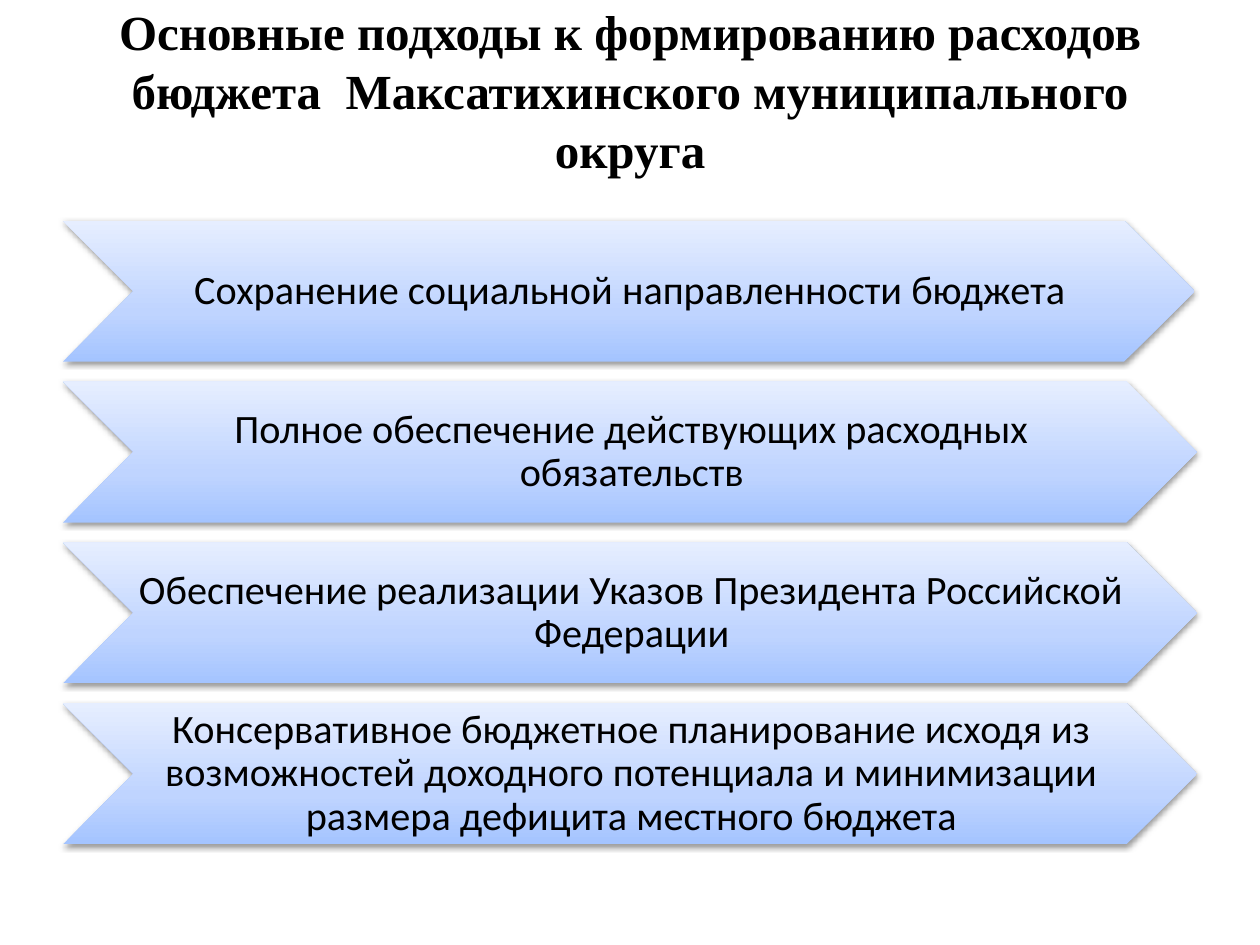
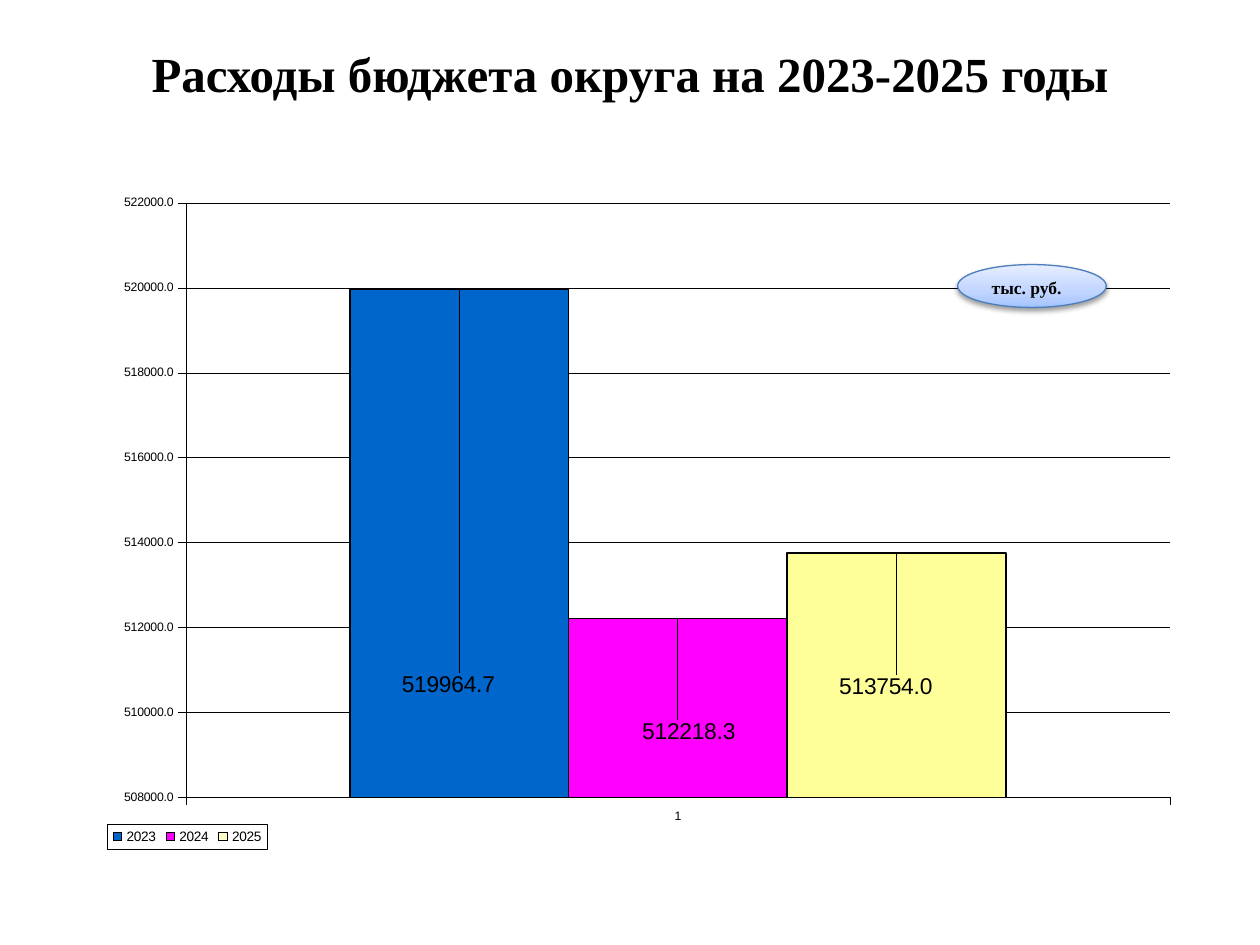
import pptx
import pptx.util
import pptx.chart.data
import pptx.dml.color
import pptx.enum.chart
import pptx.enum.shapes
import pptx.enum.text
import pptx.oxml
import pptx.oxml.ns

Inches = pptx.util.Inches
Pt = pptx.util.Pt
RGBColor = pptx.dml.color.RGBColor
Shapes = pptx.enum.shapes.MSO_SHAPE
Align = pptx.enum.text.PP_ALIGN
Anchor = pptx.enum.text.MSO_ANCHOR
namespace = pptx.oxml.ns.nsdecls
qualified = pptx.oxml.ns.qn

# Content
APPROACHES_TITLE = ("Основные подходы к формированию расходов\n"
                    "бюджета  Максатихинского муниципального округа")
APPROACHES = [
    "Сохранение социальной направленности бюджета",
    "Полное обеспечение действующих расходных обязательств",
    "Обеспечение реализации Указов Президента Российской Федерации",
    "Консервативное бюджетное планирование исходя из возможностей "
    "доходного потенциала и минимизации размера дефицита местного бюджета",
]
EXPENSES_TITLE = "Расходы бюджета округа на 2023-2025 годы"
UNIT = "тыс. руб."

# Shared style
BLACK = RGBColor(0x00, 0x00, 0x00)
WHITE = RGBColor(0xFF, 0xFF, 0xFF)
BLUE = RGBColor(0x00, 0x66, 0xCC)
MAGENTA = RGBColor(0xFF, 0x00, 0xFF)
CREAM = RGBColor(0xFF, 0xFF, 0xCC)
YELLOW = RGBColor(0xFF, 0xFF, 0x99)
MINT = RGBColor(0xCC, 0xFF, 0xCC)
OUTLINE = RGBColor(0x4B, 0x7E, 0xBC)
GRADIENT = [(0, RGBColor(0xA4, 0xC4, 0xFF)),
            (35, RGBColor(0xBF, 0xD4, 0xFF)),
            (100, RGBColor(0xE6, 0xEE, 0xFF))]
SERIF, SANS, CHART_FONT = "Times New Roman", "Calibri", "Arial"
MARGIN, CONTENT_WIDTH = 0.5, 9

# Year, value, legend colour, bar colour, label background, label shift (x, y)
EXPENSES = [
    ("2023", 519964.7, BLUE, BLUE, WHITE, (-0.01, 0.6)),
    ("2024", 512218.3, MAGENTA, MAGENTA, WHITE, (0.01, 0.19)),
    ("2025", 513754.0, CREAM, YELLOW, MINT, (-0.01, 0.22)),
]


def write_text(shape, text, size, font=SERIF, bold=False, align=Align.CENTER,
               anchor=Anchor.MIDDLE, spacing=None, insets=(0.1, 0.05, 0.1, 0.05)):
    frame = shape.text_frame
    frame.word_wrap = True
    frame.vertical_anchor = anchor
    (frame.margin_left, frame.margin_top,
     frame.margin_right, frame.margin_bottom) = map(Inches, insets)
    paragraph = frame.paragraphs[0]
    paragraph.alignment = align
    if spacing:
        paragraph.line_spacing = spacing
    for number, line in enumerate(text.split("\n")):
        if number:
            paragraph.add_line_break()
        run = paragraph.add_run()
        run.text = line
        style_font(run.font, size, font, bold)


def style_font(font, size, name=CHART_FONT, bold=False):
    font.size, font.name, font.bold = Pt(size), name, bold
    font.color.rgb = BLACK


def add_text(slide, box, text, size, **options):
    write_text(slide.shapes.add_textbox(*map(Inches, box)), text, size, **options)


def add_title(slide, text, height, **options):
    add_text(slide, (MARGIN, 0.3, CONTENT_WIDTH, height), text, 28, bold=True, **options)


def add_glossy_shape(slide, kind, box):
    """Add a shape with the shared blue gradient and soft shadow."""
    shape = slide.shapes.add_shape(kind, *map(Inches, box))
    shape.line.fill.background()
    shape.fill.gradient()
    shape.fill.gradient_angle = 90
    properties = shape._element.spPr
    stops = properties.find(".//" + qualified("a:gsLst"))
    for stop in list(stops):
        stops.remove(stop)
    for position, color in GRADIENT:
        stops.append(pptx.oxml.parse_xml(
            f'<a:gs {namespace("a")} pos="{position * 1000}">'
            f'<a:srgbClr val="{color}"/></a:gs>'))
    shape.shadow.inherit = False
    properties.find(qualified("a:effectLst")).append(pptx.oxml.parse_xml(
        f'<a:outerShdw {namespace("a")} blurRad="{Pt(3.1)}" dist="{Pt(1.6)}" '
        'dir="5400000" rotWithShape="0"><a:srgbClr val="000000">'
        '<a:alpha val="38000"/></a:srgbClr></a:outerShdw>'))
    return shape


def layout_xml(**values):
    parts = "".join(f'<c:{name} val="{value}"/>' for name, value in values.items())
    return pptx.oxml.parse_xml(
        f'<c:layout {namespace("c")}><c:manualLayout>{parts}</c:manualLayout></c:layout>')


def style_line(line, width):
    line.color.rgb = BLACK
    line.width = Pt(width)


def place_label(label, background, shift):
    """Shift a data label and give it a number format and a background."""
    extras = [
        layout_xml(x=shift[0], y=shift[1]),
        pptx.oxml.parse_xml(
            f'<c:numFmt {namespace("c")} formatCode="0.0" sourceLinked="0"/>'),
        pptx.oxml.parse_xml(
            f'<c:spPr {namespace("c", "a")}><a:solidFill>'
            f'<a:srgbClr val="{background}"/></a:solidFill></c:spPr>'),
    ]
    for position, extra in enumerate(extras, start=1):
        label.insert(position, extra)


def add_expenses_chart(slide):
    data = pptx.chart.data.CategoryChartData(number_format="0.0")
    data.categories = ["1"]
    for year, value, *_ in EXPENSES:
        data.add_series(year, [value])
    chart = slide.shapes.add_chart(
        pptx.enum.chart.XL_CHART_TYPE.COLUMN_CLUSTERED,
        *map(Inches, (0.8, 1.44, 8.65, 5.47)), data).chart
    chart.has_title = False
    style_font(chart.font, 7)

    # Axes
    value_axis, category_axis = chart.value_axis, chart.category_axis
    value_axis.minimum_scale, value_axis.maximum_scale = 508000, 522000
    value_axis.major_unit = 2000
    value_axis.tick_labels.number_format = "0.0"
    value_axis.tick_labels.number_format_is_linked = False
    style_line(value_axis.major_gridlines.format.line, 0.21)
    category_axis.tick_label_position = pptx.enum.chart.XL_TICK_LABEL_POSITION.LOW
    for axis in (value_axis, category_axis):
        axis.major_tick_mark = pptx.enum.chart.XL_TICK_MARK.OUTSIDE
        style_line(axis.format.line, 0.21)
        style_font(axis.tick_labels.font, 7)

    # Columns and their labels
    plot = chart.plots[0]
    plot.gap_width, plot.overlap, plot.vary_by_categories = 150, 0, False
    for series, expense in zip(plot.series, EXPENSES):
        _, _, legend_color, bar_color, _, _ = expense
        point = series.points[0]
        for part, color in ((series, legend_color), (point, bar_color)):
            part.format.fill.solid()
            part.format.fill.fore_color.rgb = color
            style_line(part.format.line, 0.85)
        style_font(point.data_label.font, 13)
        point.data_label.position = pptx.enum.chart.XL_LABEL_POSITION.OUTSIDE_END
    labels = list(chart.element.iter(qualified("c:dLbl")))
    for label, expense in zip(labels, EXPENSES):
        place_label(label, *expense[4:])

    # Legend and plot placement
    chart.has_legend = True
    legend = chart.legend
    legend.position = pptx.enum.chart.XL_LEGEND_POSITION.BOTTOM
    legend.include_in_layout = False
    style_font(legend.font, 7.8)
    element = legend._element
    for old in element.findall(qualified("c:layout")):
        element.remove(old)
    element.find(qualified("c:legendPos")).addnext(
        layout_xml(xMode="edge", yMode="edge", x=0.006, y=0.932, w=0.147, h=0.037))
    element.find(qualified("c:txPr")).addprevious(pptx.oxml.parse_xml(
        f'<c:spPr {namespace("c", "a")}><a:ln w="{Pt(0.21)}"><a:solidFill>'
        f'<a:srgbClr val="{BLACK}"/></a:solidFill></a:ln></c:spPr>'))
    area = chart.element.find(".//" + qualified("c:plotArea"))
    for old in area.findall(qualified("c:layout")):
        area.remove(old)
    area.insert(0, layout_xml(layoutTarget="inner", xMode="edge", yMode="edge",
                              x=0.078, y=0.031, w=0.903, h=0.863))


def build_approaches(slide):
    # The deeper bottom inset lifts the three title lines
    add_title(slide, APPROACHES_TITLE, 1.25, insets=(0.1, 0.05, 0.1, 0.47))
    top, step, height = 1.75, 1.277, 1.12
    for number, approach in enumerate(APPROACHES):
        y = top + number * step
        width = CONTENT_WIDTH if number else 8.98
        add_glossy_shape(slide, Shapes.CHEVRON, (MARGIN, y, width, height))
        add_text(slide, (MARGIN + height / 2, y, width - height, height), approach, 23,
                 font=SANS, spacing=0.9, insets=(0.03, 0.02, 0, 0.02))


def build_expenses(slide):
    add_expenses_chart(slide)
    add_title(slide, EXPENSES_TITLE, 0.55)
    badge = add_glossy_shape(slide, Shapes.OVAL, (7.6, 2.1, 1.18, 0.34))
    badge.line.color.rgb = OUTLINE
    badge.line.width = Pt(0.75)
    write_text(badge, UNIT, 10, bold=True, align=Align.LEFT, anchor=Anchor.TOP)


def main():
    presentation = pptx.Presentation()
    presentation.slide_width, presentation.slide_height = Inches(10), Inches(7.5)
    for build in (build_approaches, build_expenses):
        build(presentation.slides.add_slide(presentation.slide_layouts[6]))
    presentation.save("out.pptx")


if __name__ == "__main__":
    main()
